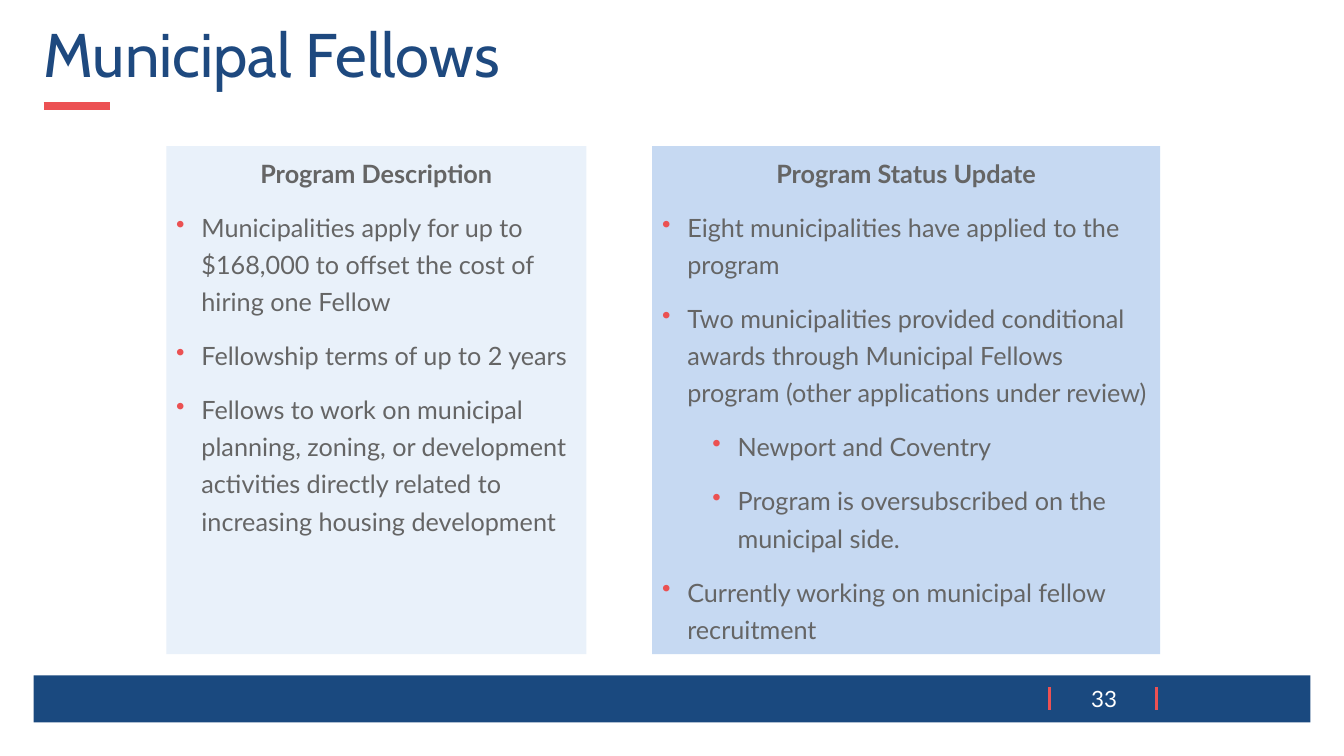
from lxml import etree
from pptx import Presentation
from pptx import util as u
from pptx.dml.color import RGBColor
from pptx.enum import shapes, text
from pptx.oxml import ns

SLIDE_WIDTH, SLIDE_HEIGHT = u.Inches(13.33), u.Inches(7.5)
COLUMNS, ROWS = 80, 45
NAVY, TITLE_BLUE, RED, BULLET_RED = "1A497F", "1E497F", "EC5153", "EB5152"
GRAY, WHITE, PALE_BLUE, LIGHT_BLUE = "656565", "FFFFFF", "E9F1FA", "C6D9F2"

DESCRIPTION = [
    (0, "Municipalities apply for up to $168,000 to offset the cost of hiring one Fellow"),
    (0, "Fellowship terms of up to 2 years"),
    (0, "Fellows to work on municipal planning, zoning, or development activities "
        "directly related to increasing housing development"),
]
STATUS = [
    (0, "Eight municipalities have applied to the program"),
    (0, "Two municipalities provided conditional awards through Municipal Fellows "
        "program (other applications under review)"),
    (1, "Newport and Coventry"),
    (1, "Program is oversubscribed on the municipal side."),
    (0, "Currently working on municipal fellow recruitment"),
]


def color(value):
    """Turn a hex string into a colour."""
    return RGBColor.from_string(value)


def place(column, row):
    """Turn a grid position or size into slide lengths."""
    return int(SLIDE_WIDTH * column / COLUMNS), int(SLIDE_HEIGHT * row / ROWS)


def add_rectangle(slide, column, row, columns, rows, fill):
    """Add a plain filled rectangle."""
    shape = slide.shapes.add_shape(
        shapes.MSO_SHAPE.RECTANGLE, *place(column, row), *place(columns, rows))
    shape.shadow.inherit = False
    shape.fill.solid()
    shape.fill.fore_color.rgb = color(fill)
    shape.line.fill.background()
    return shape


def add_line(slide, start, end, width):
    """Add a straight red line between two grid points."""
    line = slide.shapes.add_connector(
        shapes.MSO_CONNECTOR.STRAIGHT, *place(*start), *place(*end))
    line.line.color.rgb = color(RED)
    line.line.width = u.Pt(width)
    etree.SubElement(line._element.spPr, ns.qn("a:effectLst"))


def add_bullet(paragraph, level):
    """Give a paragraph a hanging red bullet at its level."""
    paragraph.level = level
    properties = paragraph._p.get_or_add_pPr()
    properties.set("marL", str(u.Inches(0.25 + 0.5 * level)))
    properties.set("indent", str(u.Inches(-0.25)))
    bullet_color = etree.SubElement(properties, ns.qn("a:buClr"))
    etree.SubElement(bullet_color, ns.qn("a:srgbClr"), val=BULLET_RED)
    etree.SubElement(properties, ns.qn("a:buChar"), char="•")


def write(paragraph, words, size=18, font="Lato", fill=GRAY, bold=False,
          align=text.PP_ALIGN.LEFT, spacing=1, before=0, after=0):
    """Write formatted words into a paragraph."""
    paragraph.alignment = align
    paragraph.line_spacing = spacing
    paragraph.space_before, paragraph.space_after = u.Pt(before), u.Pt(after)
    run = paragraph.add_run()
    run.text = words
    run.font.size, run.font.name, run.font.bold = u.Pt(size), font, bold
    run.font.color.rgb = color(fill)


def add_label(slide, column, row, columns, rows, words, **style):
    """Add a text box with one vertically centred paragraph."""
    box = slide.shapes.add_textbox(*place(column, row), *place(columns, rows))
    box.text_frame.word_wrap = True
    box.text_frame.vertical_anchor = text.MSO_ANCHOR.MIDDLE
    write(box.text_frame.paragraphs[0], words, **style)


def add_panel(slide, column, columns, fill, heading, items):
    """Add a coloured panel with a heading and bulleted items."""
    frame = add_rectangle(slide, column, 8.7, columns, 30.24, fill).text_frame
    frame.word_wrap = True
    frame.vertical_anchor = text.MSO_ANCHOR.TOP
    write(frame.paragraphs[0], heading, bold=True, align=text.PP_ALIGN.CENTER,
          spacing=1.23, after=6)
    for level, words in items:
        paragraph = frame.add_paragraph()
        add_bullet(paragraph, level)
        write(paragraph, words, spacing=1.23, before=6, after=6)


def add_footer(slide, number):
    """Add the footer band with the page number between two ticks."""
    add_rectangle(slide, 2, 40.2, 76, 2.8, NAVY)
    for column in (62.46, 68.82):
        add_line(slide, (column, 40.92), (column, 42.24), 2.25)
    add_label(slide, 63.8, 40.5, 3.84, 2.2, number, size=16, fill=WHITE,
              align=text.PP_ALIGN.CENTER)


def main():
    """Build and save the slide."""
    presentation = Presentation()
    presentation.slide_width, presentation.slide_height = SLIDE_WIDTH, SLIDE_HEIGHT
    slide = presentation.slides.add_slide(presentation.slide_layouts[6])
    add_line(slide, (2.6, 6.3), (6.54, 6.3), 6)
    add_label(slide, 2, 1.14, 76, 4.6, "Municipal Fellows", size=44, font="Cabin",
              fill=TITLE_BLUE, spacing=0.9)
    add_panel(slide, 9.9, 25, PALE_BLUE, "Program Description", DESCRIPTION)
    add_panel(slide, 38.82, 30.24, LIGHT_BLUE, "Program Status Update", STATUS)
    add_footer(slide, "33")
    presentation.save("out.pptx")


if __name__ == "__main__":
    main()
